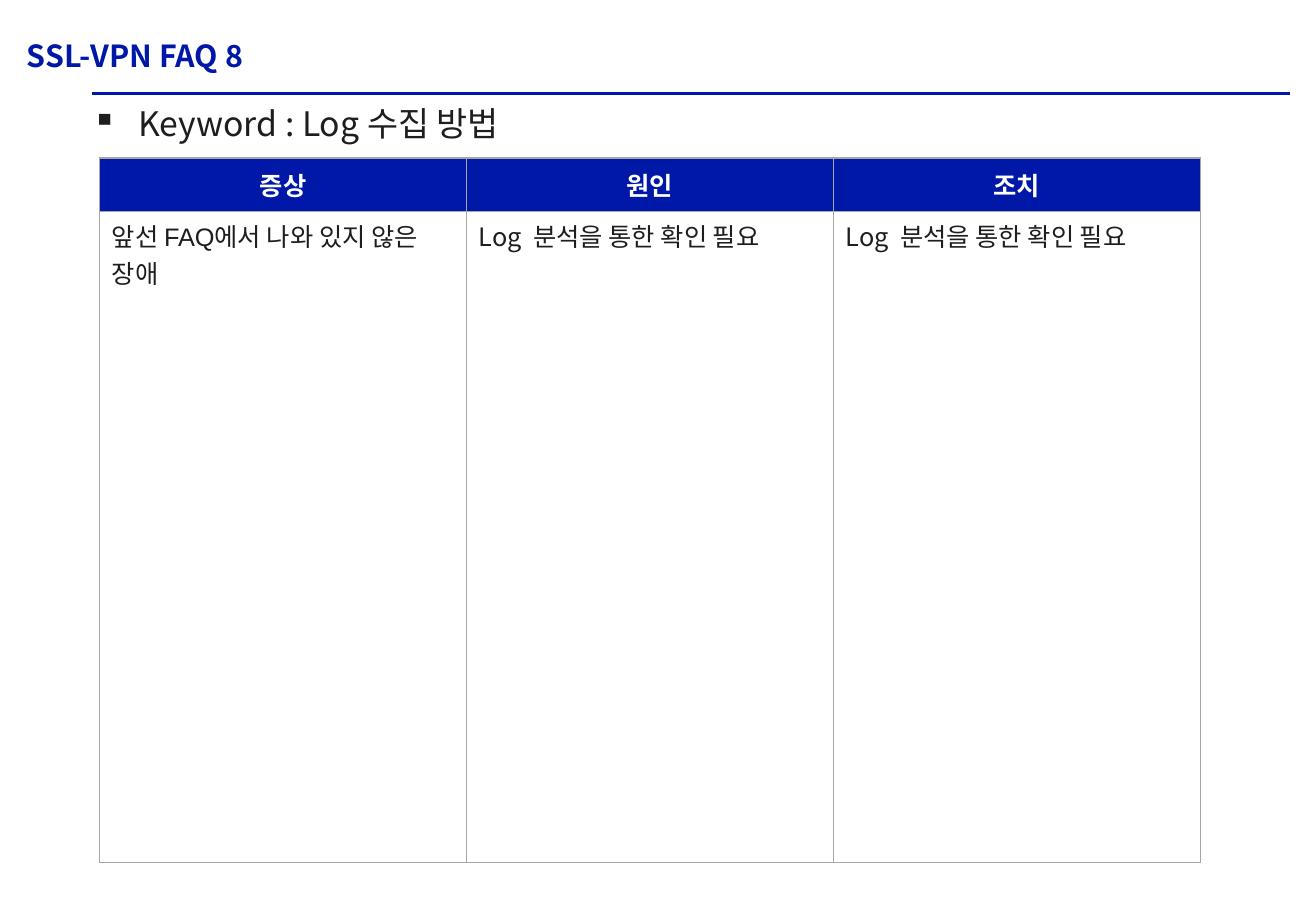
"""Build the SSL-VPN FAQ 8 slide with its symptom, cause and action table."""
from lxml import etree
from pptx import Presentation
from pptx.dml.color import RGBColor
from pptx.enum.shapes import MSO_CONNECTOR
from pptx.enum.text import MSO_ANCHOR, MSO_AUTO_SIZE, PP_ALIGN
from pptx.oxml.ns import qn
from pptx.util import Inches, Pt

TITLE = "SSL-VPN FAQ 8"
KEYWORD = "Keyword : Log 수집 방법"
HEADINGS = ["증상", "원인", "조치"]
ANSWERS = [
    ("앞선 FAQ에서 나와 있지 않은 장애", "Arial"),
    ("Log  분석을 통한 확인 필요", "Noto Sans CJK KR"),
    ("Log  분석을 통한 확인 필요", "Noto Sans CJK KR"),
]
ROW_HEIGHTS = [0.44, 5.36]
COLUMN_WIDTH = 3.02

SANS = "Noto Sans CJK KR"
BLUE = RGBColor(0x00, 0x18, 0xA8)
INK = RGBColor(0x1E, 0x1E, 0x1E)
WHITE = RGBColor(0xFF, 0xFF, 0xFF)
GRAY = RGBColor(0xA6, 0xA6, 0xA6)
STRAIGHT = MSO_CONNECTOR.STRAIGHT
MIDDLE, TOP = MSO_ANCHOR.MIDDLE, MSO_ANCHOR.TOP
CENTER, LEFT = PP_ALIGN.CENTER, PP_ALIGN.LEFT
NO_FIT = MSO_AUTO_SIZE.NONE


def style(para, size, color, font=SANS, bold=False):
    para.font.name = font
    para.font.size = Pt(size)
    para.font.bold = bold
    para.font.color.rgb = color


def add_text(page, text, left, top, width, height):
    box = page.shapes.add_textbox(*map(Inches, (left, top, width, height)))
    frame = box.text_frame
    frame.auto_size = NO_FIT
    frame.text = text
    return frame


def add_borders(cell):
    properties = cell._tc.get_or_add_tcPr()
    for index, side in enumerate(("lnL", "lnR", "lnT", "lnB")):
        line = etree.Element(qn(f"a:{side}"), w=str(Pt(1)))
        fill = etree.SubElement(line, qn("a:solidFill"))
        etree.SubElement(fill, qn("a:srgbClr"), val=str(GRAY))
        properties.insert(index, line)


def fill_cell(cell, text, font, is_heading):
    cell.text = text
    para = cell.text_frame.paragraphs[0]
    para.alignment = CENTER if is_heading else LEFT
    cell.vertical_anchor = MIDDLE if is_heading else TOP
    style(para, 15, WHITE if is_heading else INK, font, is_heading)
    if is_heading:
        cell.fill.solid()
        cell.fill.fore_color.rgb = BLUE
    else:
        cell.fill.background()
    add_borders(cell)


def add_faq_table(page):
    rows = [[(heading, "Arial") for heading in HEADINGS], ANSWERS]
    table = page.shapes.add_table(
        len(rows), len(HEADINGS), Inches(0.82), Inches(1.3),
        Inches(COLUMN_WIDTH * len(HEADINGS)), Inches(sum(ROW_HEIGHTS))).table
    table.horz_banding = False
    for column in table.columns:
        column.width = Inches(COLUMN_WIDTH)
    for row_index, row in enumerate(rows):
        table.rows[row_index].height = Inches(ROW_HEIGHTS[row_index])
        for column_index, (text, font) in enumerate(row):
            fill_cell(table.cell(row_index, column_index), text, font, row_index == 0)


def main():
    deck = Presentation()
    deck.slide_width, deck.slide_height = Inches(10.83), Inches(7.5)
    page = deck.slides.add_slide(deck.slide_layouts[6])

    rule = page.shapes.add_connector(
        STRAIGHT, Inches(0.76), Inches(0.77), Inches(10.62), Inches(0.77))
    rule.line.color.rgb = BLUE
    rule.line.width = Pt(1.5)
    etree.SubElement(rule._element.spPr, qn("a:effectLst"))

    add_faq_table(page)

    keyword = add_text(page, KEYWORD, 0.66, 0.8, 3.84, 0.44)
    keyword.word_wrap = False
    para = keyword.paragraphs[0]
    properties = para._p.get_or_add_pPr()
    properties.set("marL", str(Inches(0.38)))
    properties.set("indent", str(Inches(-0.38)))
    etree.SubElement(properties, qn("a:buChar"), char="▪")
    style(para, 20, INK)

    title = add_text(page, TITLE, 0.22, 0, 10.41, 0.91)
    title.word_wrap = True
    title.vertical_anchor = MIDDLE
    title.margin_left = title.margin_right = title.margin_top = title.margin_bottom = 0
    style(title.paragraphs[0], 18, BLUE, bold=True)

    deck.save("out.pptx")


if __name__ == "__main__":
    main()
